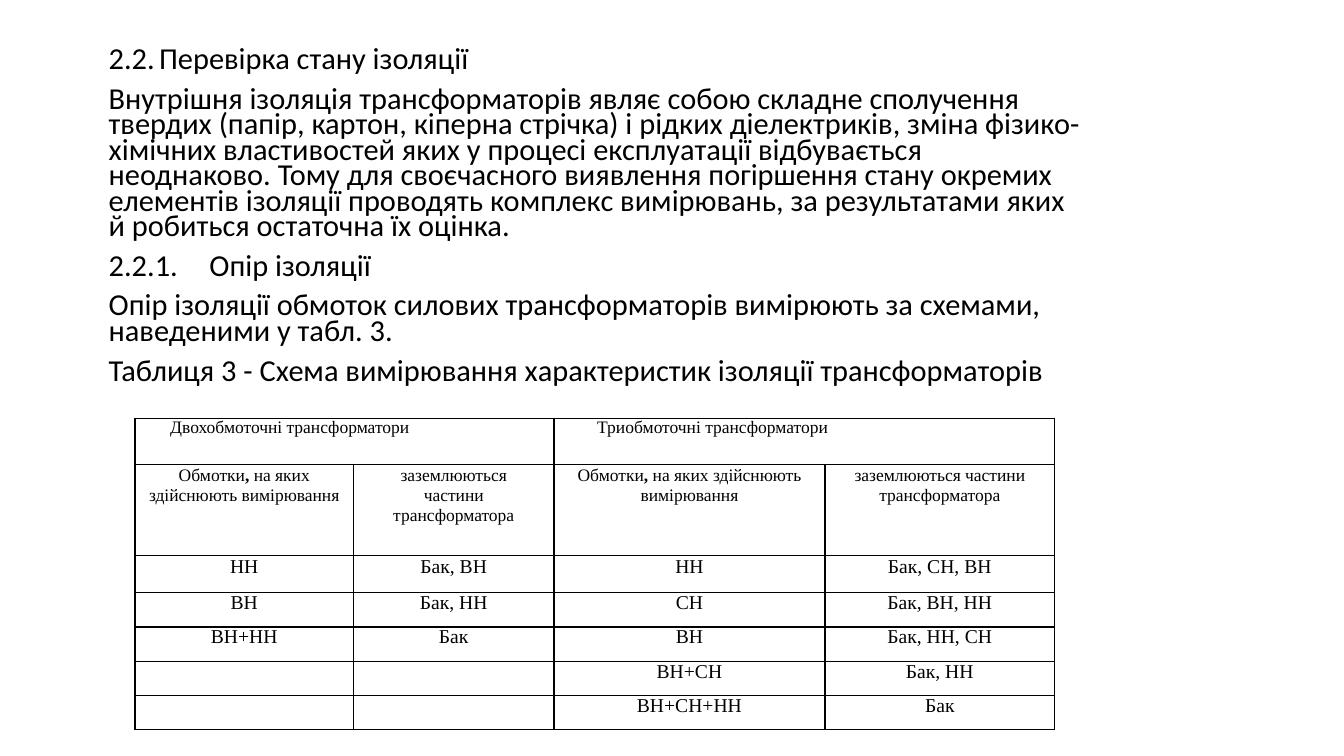
from pptx import Presentation
from pptx.dml.color import RGBColor
from pptx.enum.text import MSO_ANCHOR, PP_ALIGN
from pptx.oxml.ns import qn
from pptx.util import Cm, Pt
from lxml import etree

TOP = MSO_ANCHOR.TOP
LEFT, CENTER = PP_ALIGN.LEFT, PP_ALIGN.CENTER

BODY = [
    "2.2.\tПеревірка стану ізоляції",
    "Внутрішня ізоляція трансформаторів являє собою складне сполучення твердих "
    "(папір, картон, кіперна стрічка) і рідких діелектриків, зміна фізико- хімічних "
    "властивостей яких у процесі експлуатації відбувається неоднаково. Тому для "
    "своєчасного виявлення погіршення стану окремих елементів ізоляції проводять "
    "комплекс вимірювань, за результатами яких й робиться остаточна їх оцінка.",
    "2.2.1.\tОпір ізоляції",
    "Опір ізоляції обмоток силових трансформаторів вимірюють за схемами, "
    "наведеними у табл. 3.",
    "Таблиця 3 - Схема вимірювання характеристик ізоляції трансформаторів",
]
GROUPS = [(0, "Двохобмоточні трансформатори", 0.89), (2, "Триобмоточні трансформатори", 1.09)]
WINDINGS = ("Обмотки", ", ", "на яких здійснюють вимірювання")
GROUNDED = ("заземлюються частини трансформатора",)
HEADINGS = [WINDINGS, GROUNDED, WINDINGS, GROUNDED]
SCHEMES = [
    ("HH", "Бак, BH", "HH", "Бак, CH, BH"),
    ("BH", "Бак, HH", "CH", "Бак, BH, HH"),
    ("BH+HH", "Бак", "BH", "Бак, HH, CH"),
    ("", "", "BH+CH", "Бак, HH"),
    ("", "", "ВН+СН+НН", "Бак"),
]
COLUMN_WIDTHS = [5.51, 5.05, 6.83, 5.79]
ROW_HEIGHTS = [1.17, 2.29, 0.94] + [0.86] * 4
HEADING_INDENTS = [0.18, 0.48, 0.36, 0.43]
SCHEME_INDENTS = [0.18, 0.48, 0.36, 0.74]

THEME = {
    "ink": "000000",
    "body_font": "Calibri",
    "table_font": "Times New Roman",
    "body_size": 21.7,
    "heading_size": 12.5,
    "scheme_size": 14,
    "border": 1,
}


def style(paragraph, font_name, size, align=LEFT, spacing=None, before=0):
    paragraph.font.name = font_name
    paragraph.font.size = Pt(size)
    paragraph.font.color.rgb = RGBColor.from_string(THEME["ink"])
    paragraph.alignment = align
    paragraph.space_before = Pt(before)
    if spacing:
        paragraph.line_spacing = spacing


def write_cell(cell, parts, size, indent, align=CENTER, spacing=None, before=0):
    paragraph = cell.text_frame.paragraphs[0]
    style(paragraph, THEME["table_font"], size, align, spacing, before)
    properties = paragraph._p.get_or_add_pPr()
    properties.set("marL", str(Cm(indent)))
    if align == CENTER:
        properties.set("marR", str(Cm(indent)))
    for part in parts:
        run = paragraph.add_run()
        run.text = part
        if part == ", ":
            run.font.bold = True


def format_cell(cell):
    cell.margin_left = cell.margin_right = cell.margin_top = cell.margin_bottom = 0
    cell.vertical_anchor = TOP
    properties = cell._tc.get_or_add_tcPr()
    for side in ("a:lnL", "a:lnR", "a:lnT", "a:lnB"):
        line = etree.SubElement(properties, qn(side), w=str(Pt(THEME["border"])))
        fill = etree.SubElement(line, qn("a:solidFill"))
        etree.SubElement(fill, qn("a:srgbClr"), val=THEME["ink"])
    cell.fill.background()


def add_body(slide):
    box = slide.shapes.add_textbox(Cm(2.49), Cm(1.12), Cm(25), Cm(9.04))
    frame = box.text_frame
    frame.word_wrap = True
    for index, text in enumerate(BODY):
        paragraph = frame.add_paragraph() if index else frame.paragraphs[0]
        paragraph.text = text
        style(paragraph, THEME["body_font"], THEME["body_size"], spacing=0.7, before=10)


def add_schemes(slide):
    table = slide.shapes.add_table(
        len(ROW_HEIGHTS), len(COLUMN_WIDTHS), Cm(3.4), Cm(10.54),
        Cm(sum(COLUMN_WIDTHS)), Cm(sum(ROW_HEIGHTS))).table
    table.first_row = table.horz_banding = False
    for column, width in zip(table.columns, COLUMN_WIDTHS):
        column.width = Cm(width)
    for row, height in zip(table.rows, ROW_HEIGHTS):
        row.height = Cm(height)
    for cell in table.iter_cells():
        format_cell(cell)

    for column, title, indent in GROUPS:
        cell = table.cell(0, column)
        cell.merge(table.cell(0, column + 1))
        write_cell(cell, [title], THEME["heading_size"], indent, LEFT, before=3.9)
    for column, (parts, indent) in enumerate(zip(HEADINGS, HEADING_INDENTS)):
        write_cell(table.cell(1, column), parts, THEME["heading_size"], indent, spacing=Pt(14.4))
    for row, scheme in enumerate(SCHEMES, start=2):
        spacing, before = (None, 0.5) if row == 2 else (Pt(15.1), 0)
        for column, (text, indent) in enumerate(zip(scheme, SCHEME_INDENTS)):
            if text:
                write_cell(table.cell(row, column), [text], THEME["scheme_size"], indent,
                           spacing=spacing, before=before)


def main():
    presentation = Presentation()
    presentation.slide_width, presentation.slide_height = Cm(33.87), Cm(19.05)
    slide = presentation.slides.add_slide(presentation.slide_layouts[6])
    add_body(slide)
    add_schemes(slide)
    presentation.save("out.pptx")


if __name__ == "__main__":
    main()
